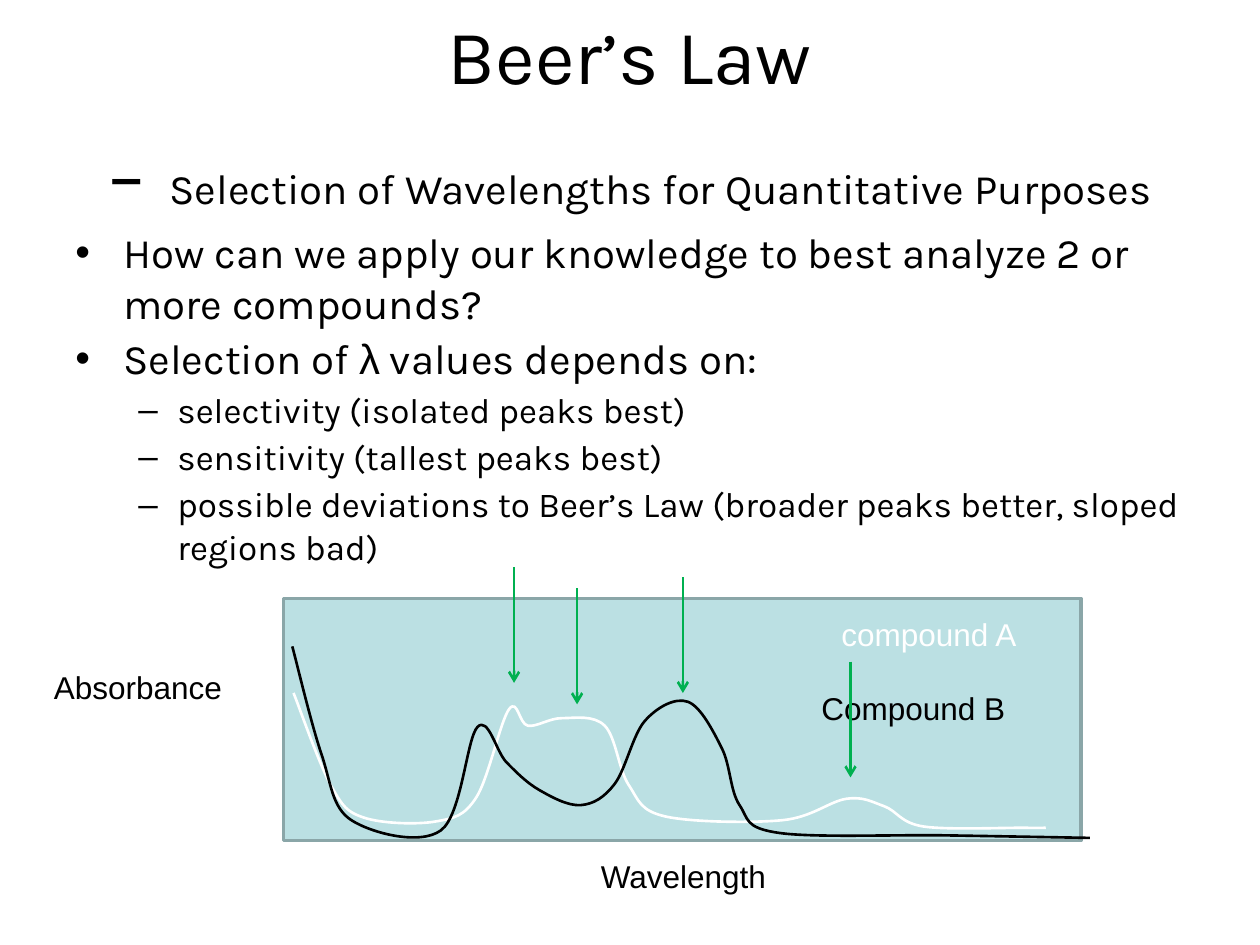
from typing import NamedTuple

from lxml import etree
from pptx import Presentation
from pptx import util as u
from pptx.dml.color import RGBColor
from pptx.enum import shapes, text
from pptx.oxml.ns import qn

COLORS = {
    "ink": "000000",
    "white": "FFFFFF",
    "panel": "BBE0E3",
    "border": "8AA6A8",
    "arrow": "00B050",
}
ARROW_LENGTH = 0.92


class Level(NamedTuple):
    bullet: str
    size: int
    margin: float
    hang: float


class Bullet(NamedTuple):
    level: Level
    runs: list[tuple[str, str]]


class Label(NamedTuple):
    words: str
    left: float
    top: float
    width: float
    color: str = "ink"


class Curve(NamedTuple):
    color: str
    points: list[tuple[float, float]]


class Arrow(NamedTuple):
    x: float
    top: float


MAIN = Level("•", 24, 0.38, 0.38)
SUB = Level("–", 20, 0.81, 0.31)

BULLETS = [
    Bullet(MAIN, [("How can we apply our knowledge to best analyze 2 or more compounds?", "Karla")]),
    Bullet(MAIN, [("Selection of ", "Karla"), ("λ", "Arial"), (" values depends on:", "Karla")]),
    Bullet(SUB, [("selectivity (isolated peaks best)", "Karla")]),
    Bullet(SUB, [("sensitivity (tallest peaks best)", "Karla")]),
    Bullet(SUB, [("possible deviations to Beer’s Law (broader peaks better, sloped regions bad)", "Karla")]),
]
AXIS_LABELS = [
    Label("Absorbance", 0.33, 5.25, 1.67),
    Label("Wavelength", 4.67, 6.75, 1.75),
]
COMPOUND_LABELS = [
    Label("compound A", 6.58, 4.83, 1.67, "white"),
    Label("Compound B", 6.42, 5.42, 2.08),
]
CURVES = [
    Curve("white", [
        (2.33, 5.5), (2.63, 6.24), (2.89, 6.49), (3.46, 6.52), (3.78, 6.33), (4.04, 5.63),
        (4.19, 5.76), (4.46, 5.7), (4.8, 5.76), (4.99, 6.23), (5.28, 6.48), (6.21, 6.51),
        (6.72, 6.34), (7.02, 6.4), (7.33, 6.56), (8.13, 6.57), (8.3, 6.57),
    ]),
    Curve("ink", [
        (2.32, 5.13), (2.55, 5.98), (2.79, 6.51), (3.5, 6.59), (3.79, 5.77), (4.02, 6.05),
        (4.28, 6.27), (4.61, 6.39), (4.88, 6.22), (5.12, 5.72), (5.46, 5.57), (5.73, 5.94),
        (5.87, 6.39), (6.18, 6.61), (7.51, 6.63), (8.65, 6.65),
    ]),
]
ARROWS = [Arrow(4.58, 4.67), Arrow(5.42, 4.58), Arrow(6.75, 5.25), Arrow(4.08, 4.5)]


def rgb(name: str) -> RGBColor:
    """Return the named colour."""
    return RGBColor.from_string(COLORS[name])


def set_font(font, name: str, size: int, color: str = "ink") -> None:
    """Set the face, size and colour of a font."""
    font.name = name
    font.size = u.Pt(size)
    font.color.rgb = rgb(color)


def set_line(line, color: str, width: float) -> None:
    """Set the colour and width of a line."""
    line.color.rgb = rgb(color)
    line.width = u.Pt(width)


def add_text_frame(s, left: float, top: float, width: float, height: float):
    """Add a wrapping text box and return its text frame."""
    tf = s.shapes.add_textbox(*map(u.Inches, (left, top, width, height))).text_frame
    tf.word_wrap = True
    return tf


def add_title(s) -> None:
    """Add the two-line centred title."""
    tf = add_text_frame(s, 0.5, 0.3, 9, 1.25)
    tf.vertical_anchor = text.MSO_ANCHOR.MIDDLE
    p = tf.paragraphs[0]
    p.alignment = text.PP_ALIGN.CENTER
    subtitle = "Selection of Wavelengths for Quantitative Purposes"
    for i, (words, size) in enumerate([("Beer’s Law", 44), ("–", 44), (" ", 60), (subtitle, 24)]):
        if i == 1:
            p.add_line_break()
        r = p.add_run()
        r.text = words
        set_font(r.font, "Karla", size)


def add_bullets(s, bullets: list[Bullet]) -> None:
    """Add the bulleted list."""
    tf = add_text_frame(s, 0.5, 1.75, 9, 4.95)
    for i, (level, runs) in enumerate(bullets):
        p = tf.add_paragraph() if i else tf.paragraphs[0]
        p.level = int(level is SUB)
        p.space_before = u.Pt(3)
        set_font(p.font, "Karla", level.size)
        for words, face in runs:
            r = p.add_run()
            r.text = words
            set_font(r.font, face, level.size)
        props = p._p.get_or_add_pPr()
        props.set("marL", str(u.Inches(level.margin)))
        props.set("indent", str(-u.Inches(level.hang)))
        mark = etree.Element(qn("a:buChar"), char=level.bullet)
        props.find(qn("a:defRPr")).addprevious(mark)
        mark.addprevious(etree.Element(qn("a:buFont"), typeface="Arial"))


def add_label(s, label: Label) -> None:
    """Add a one-line label."""
    p = add_text_frame(s, label.left, label.top, label.width, 0.4).paragraphs[0]
    r = p.add_run()
    r.text = label.words
    set_font(r.font, "Arial", 18, label.color)


def add_panel(s) -> None:
    """Add the plot background."""
    sp = s.shapes.add_shape(shapes.MSO_SHAPE.RECTANGLE, *map(u.Inches, (2.25, 4.75, 6.33, 1.92)))
    sp.shadow.inherit = False
    sp.fill.solid()
    sp.fill.fore_color.rgb = rgb("panel")
    set_line(sp.line, "border", 2)


def add_curve(s, curve: Curve) -> None:
    """Draw a smooth Catmull-Rom curve through the points."""
    anchors = [(u.Inches(x), u.Inches(y)) for x, y in curve.points]
    builder = s.shapes.build_freeform(*anchors[0])
    builder.add_line_segments(anchors[1:], close=False)
    sp = builder.convert_to_shape()
    sp.shadow.inherit = False
    sp.fill.background()
    set_line(sp.line, curve.color, 1.5)
    knots = [(int(pt.get("x")), int(pt.get("y"))) for pt in sp._element.xpath(".//a:path//a:pt")]
    padded = [knots[0], *knots, knots[-1]]
    for i, segment in enumerate(sp._element.xpath(".//a:path/a:lnTo")):
        before, start, end, after = padded[i:i + 4]
        first = [a + (c - b) / 6 for a, b, c in zip(start, before, end)]
        second = [a - (c - b) / 6 for a, b, c in zip(end, start, after)]
        segment.clear()
        bezier = etree.Element(qn("a:cubicBezTo"))
        for x, y in (first, second, end):
            etree.SubElement(bezier, qn("a:pt"), x=str(round(x)), y=str(round(y)))
        segment.getparent().replace(segment, bezier)


def add_arrow(s, arrow: Arrow) -> None:
    """Add a downward arrow marking a wavelength."""
    ends = (arrow.x, arrow.top, arrow.x, arrow.top + ARROW_LENGTH)
    cxn = s.shapes.add_connector(shapes.MSO_CONNECTOR.STRAIGHT, *map(u.Inches, ends))
    set_line(cxn.line, "arrow", 1.5)
    etree.SubElement(cxn.line._get_or_add_ln(), qn("a:tailEnd"), type="arrow")
    etree.SubElement(cxn._element.spPr, qn("a:effectLst"))


def main() -> None:
    """Build and save the slide."""
    prs = Presentation()
    prs.slide_width, prs.slide_height = u.Inches(10), u.Inches(7.5)
    s = prs.slides.add_slide(prs.slide_layouts[6])
    add_title(s)
    add_bullets(s, BULLETS)
    add_panel(s)
    for label in AXIS_LABELS:
        add_label(s, label)
    for curve, label in zip(CURVES, COMPOUND_LABELS):
        add_curve(s, curve)
        add_label(s, label)
    for arrow in ARROWS:
        add_arrow(s, arrow)
    prs.save("out.pptx")


if __name__ == "__main__":
    main()
